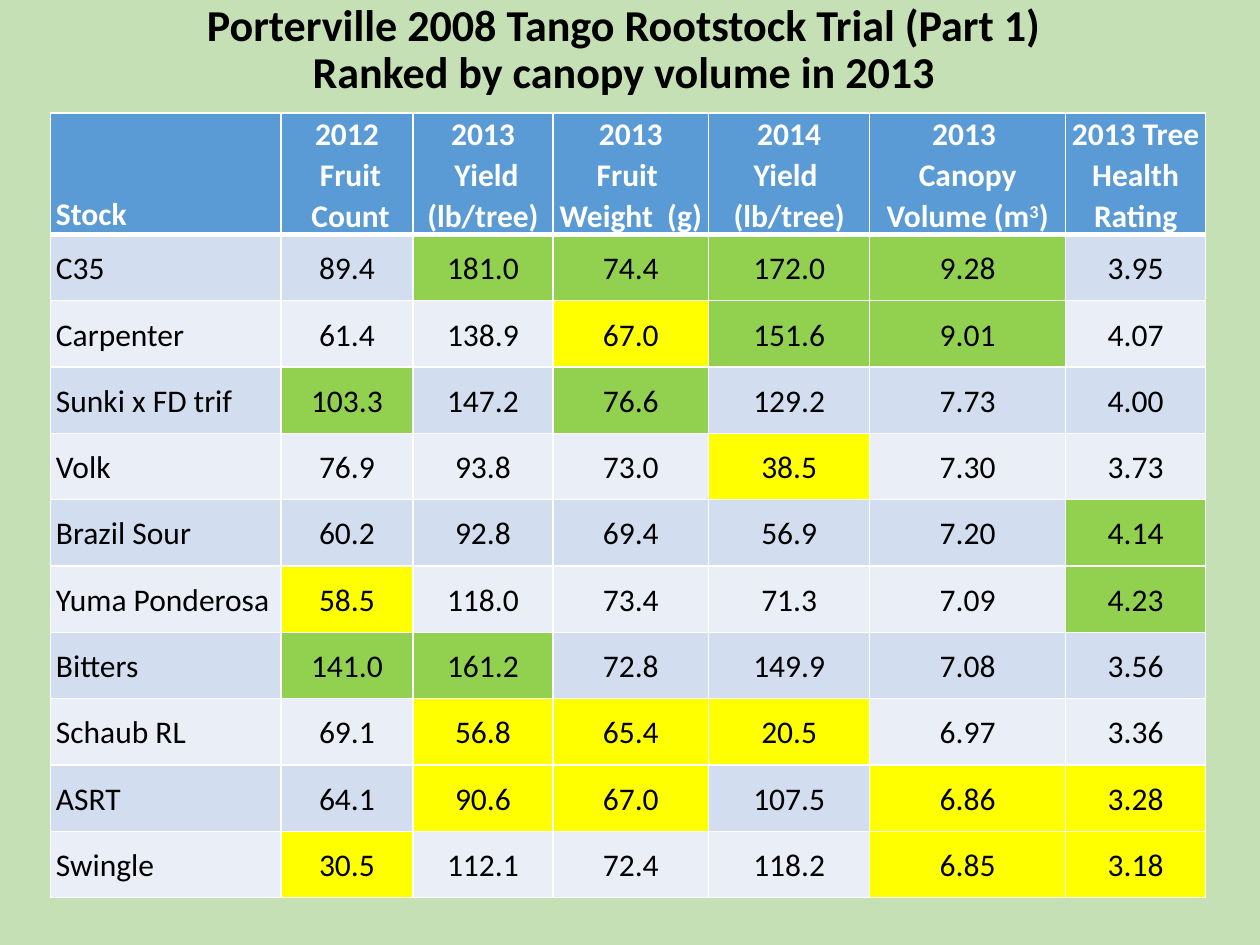
from lxml.etree import fromstring
from pptx import Presentation
from pptx.dml.color import RGBColor
from pptx.enum.text import MSO_ANCHOR, PP_ALIGN
from pptx.util import Pt

COLORS = {
    "page": "C5E0B4",
    "header": "5B9BD5",
    "odd": "D2DEEF",
    "even": "EAEFF7",
    "high": "92D050",
    "low": "FFFF00",
    "white": "FFFFFF",
    "black": "000000",
}
FONT = "Calibri"
DRAWING = "http://schemas.openxmlformats.org/drawingml/2006/main"
TITLE = "Porterville 2008 Tango Rootstock Trial (Part 1)\vRanked by canopy volume in 2013"
HEADERS = [
    ["Stock"],
    ["2012\v Fruit\v Count"],
    ["2013\v Yield (lb/tree)"],
    ["2013", "Fruit \vWeight  (g)"],
    ["2014", "Yield \v(lb/tree)"],
    ["2013 \vCanopy Volume (m^3)"],
    ["2013 Tree Health Rating"],
]
TIGHT_COLUMNS = (3, 4)
UNSPACED_HEADERS = (3, 4, 5)
COLUMN_WIDTHS = [131.5, 75.5, 80, 89, 92, 112, 80]
HEADER_HEIGHT = 67
MARKS = {"+": "high", "-": "low"}
TRIAL = [
    ("C35", "89.4 181.0+ 74.4+ 172.0+ 9.28+ 3.95"),
    ("Carpenter", "61.4 138.9 67.0- 151.6+ 9.01+ 4.07"),
    ("Sunki x FD trif", "103.3+ 147.2 76.6+ 129.2 7.73 4.00"),
    ("Volk", "76.9 93.8 73.0 38.5- 7.30 3.73"),
    ("Brazil Sour", "60.2 92.8 69.4 56.9 7.20 4.14+"),
    ("Yuma Ponderosa", "58.5- 118.0 73.4 71.3 7.09 4.23+"),
    ("Bitters", "141.0+ 161.2+ 72.8 149.9 7.08 3.56"),
    ("Schaub RL", "69.1 56.8- 65.4- 20.5- 6.97 3.36"),
    ("ASRT", "64.1 90.6- 67.0- 107.5 6.86- 3.28-"),
    ("Swingle", "30.5- 112.1 72.4 118.2 6.85- 3.18-"),
]


def color(name):
    return RGBColor.from_string(COLORS[name])


def style_font(para, size, bold, ink):
    para.font.name = FONT
    para.font.size = Pt(size)
    para.font.bold = bold
    para.font.color.rgb = color(ink)


def add_title(page, left, top, width, height):
    box = page.shapes.add_textbox(Pt(left), Pt(top), Pt(width), Pt(height))
    frame = box.text_frame
    frame.word_wrap = True
    frame.vertical_anchor = MSO_ANCHOR.MIDDLE
    para = frame.paragraphs[0]
    para.text = TITLE
    para.alignment = PP_ALIGN.CENTER
    para.line_spacing = 0.9
    style_font(para, 25.2, True, "black")


def write_text(para, text):
    base, caret, rest = text.partition("^")
    para.text = base
    if caret:
        power = para.add_run()
        power.text = rest[0]
        power.font._element.set("baseline", "30000")
        para.add_run().text = rest[1:]


def add_borders(cell, bottom_width):
    properties = cell._tc.get_or_add_tcPr()
    widths = {"lnL": 1, "lnR": 1, "lnT": 1, "lnB": bottom_width}
    for index, (side, width) in enumerate(widths.items()):
        line = fromstring(
            f'<a:{side} xmlns:a="{DRAWING}" w="{Pt(width)}"><a:solidFill>'
            f'<a:srgbClr val="{COLORS["white"]}"/></a:solidFill></a:{side}>'
        )
        properties.insert(index, line)


def fill_cell(cell, column, texts, fill, header=False):
    cell.fill.solid()
    cell.fill.fore_color.rgb = color(fill)
    cell.vertical_anchor = MSO_ANCHOR.BOTTOM if header else MSO_ANCHOR.MIDDLE
    cell.margin_left = cell.margin_right = Pt(0 if column in TIGHT_COLUMNS else 3)
    cell.margin_top = cell.margin_bottom = Pt(0)
    spacing = 0 if header and column in UNSPACED_HEADERS else 3
    frame = cell.text_frame
    for index, text in enumerate(texts):
        para = frame.add_paragraph() if index else frame.paragraphs[0]
        write_text(para, text)
        para.alignment = PP_ALIGN.CENTER if column else PP_ALIGN.LEFT
        para.line_spacing = 1.07
        para.space_before = para.space_after = Pt(spacing)
        style_font(para, 18, header, "white" if header else "black")
    add_borders(cell, 3 if header else 1)


def add_trial_table(page, left, top, width, height):
    frame = page.shapes.add_table(
        len(TRIAL) + 1, len(HEADERS), Pt(left), Pt(top), Pt(width), Pt(height)
    )
    table = frame.table
    scale = width / sum(COLUMN_WIDTHS)
    for column, share in zip(table.columns, COLUMN_WIDTHS):
        column.width = Pt(share * scale)
    for row in table.rows:
        row.height = Pt((height - HEADER_HEIGHT) / len(TRIAL))
    table.rows[0].height = Pt(HEADER_HEIGHT)

    for column, texts in enumerate(HEADERS):
        fill_cell(table.cell(0, column), column, texts, "header", header=True)
    for row, (stock, values) in enumerate(TRIAL, start=1):
        band = "odd" if row % 2 else "even"
        fill_cell(table.cell(row, 0), 0, [stock], band)
        for column, value in enumerate(values.split(), start=1):
            fill = MARKS.get(value[-1], band)
            fill_cell(table.cell(row, column), column, [value.rstrip("+-")], fill)


def main():
    deck = Presentation()
    deck.slide_width, deck.slide_height = Pt(720), Pt(540)
    page = deck.slides.add_slide(deck.slide_layouts[6])
    page.background.fill.solid()
    page.background.fill.fore_color.rgb = color("page")
    add_title(page, 46, 0, 621, 58)
    add_trial_table(page, 29, 64.6, 660, 446)
    deck.save("out.pptx")


if __name__ == "__main__":
    main()
